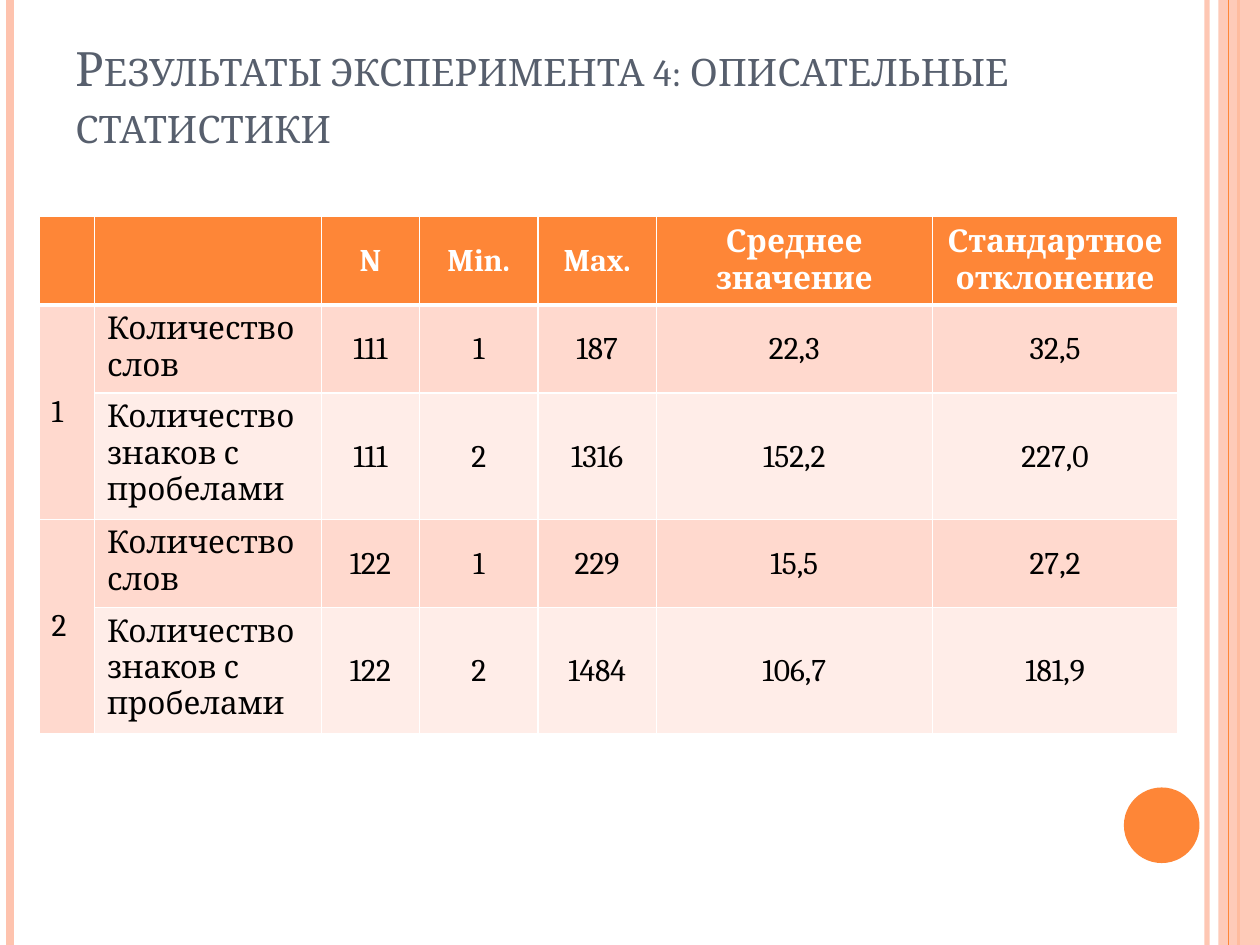
from lxml import etree
from pptx import Presentation
from pptx.dml.color import RGBColor
from pptx.enum import shapes, text
from pptx.oxml import ns
from pptx.util import Inches, Pt

ORANGE = RGBColor(0xFE, 0x86, 0x37)
PEACH = RGBColor(0xFE, 0xC3, 0xAE)
BAND_DARK = RGBColor(0xFF, 0xD9, 0xCE)
BAND_LIGHT = RGBColor(0xFF, 0xED, 0xE8)
SLATE = RGBColor(0x57, 0x5F, 0x6D)
WHITE = RGBColor(0xFF, 0xFF, 0xFF)
BLACK = RGBColor(0, 0, 0)


def write(frame, content, size=18, color=BLACK, bold=False, align=text.PP_ALIGN.LEFT):
    paragraph = frame.paragraphs[0]
    paragraph.alignment = align
    run = paragraph.add_run()
    run.text = content
    run.font.name = "Cambria"
    run.font.size = Pt(size)
    run.font.bold = bold
    run.font.color.rgb = color
    return run


def set_alpha(shape, percent):
    color = shape._element.spPr.find(".//" + ns.qn("a:srgbClr"))
    etree.SubElement(color, ns.qn("a:alpha"), val=str(percent * 1000))


presentation = Presentation()
presentation.slide_width = Inches(10)
presentation.slide_height = Inches(7.5)
slide = presentation.slides.add_slide(presentation.slide_layouts[6])

# Vertical stripes, side band and circle: x, colour, width, opacity
stripes = [
    (9.58, PEACH, 3, 93),
    (0.08, PEACH, 4.5, 100),
    (9.83, ORANGE, 1.5, 100),
    (9.75, ORANGE, 0.75, 100),
]
for x, color, width, opacity in stripes:
    if x == 9.75:  # the band lies beneath the last stripe
        band = slide.shapes.add_shape(
            shapes.MSO_SHAPE.RECTANGLE, Inches(9.67), 0, Inches(0.33), Inches(7.5))
        band.shadow.inherit = False
        band.fill.solid()
        band.fill.fore_color.rgb = PEACH
        band.line.fill.background()
        set_alpha(band, 87)
    stripe = slide.shapes.add_connector(
        shapes.MSO_CONNECTOR.STRAIGHT, Inches(x), 0, Inches(x), Inches(7.5))
    stripe.line.color.rgb = color
    stripe.line.width = Pt(width)
    if opacity < 100:
        set_alpha(stripe, opacity)
    etree.SubElement(stripe._element.spPr, ns.qn("a:effectLst"))

circle = slide.shapes.add_shape(
    shapes.MSO_SHAPE.OVAL, Inches(8.92), Inches(6.25), Inches(0.6), Inches(0.6))
circle.shadow.inherit = False
circle.fill.solid()
circle.fill.fore_color.rgb = ORANGE
circle.line.fill.background()

# Title in small capitals
title = slide.shapes.add_textbox(Inches(0.5), Inches(0.86), Inches(8.17), Inches(0.4))
title.text_frame.word_wrap = True
title.text_frame.vertical_anchor = text.MSO_ANCHOR.BOTTOM
title_run = write(title.text_frame, "Результаты эксперимента 4: описательные статистики",
                  size=27, color=SLATE)
title_run.font._element.set("cap", "small")

# Table of descriptive statistics
words, characters = "Количество слов", "Количество знаков с пробелами"
rows = [
    ["", "", "N", "Min.", "Max.", "Среднее значение", "Стандартное отклонение"],
    ["1", words, "111", "1", "187", "22,3", "32,5"],
    ["", characters, "111", "2", "1316", "152,2", "227,0"],
    ["2", words, "122", "1", "229", "15,5", "27,2"],
    ["", characters, "122", "2", "1484", "106,7", "181,9"],
]
column_widths = [0.44, 1.8, 0.78, 0.94, 0.94, 2.19, 1.95]
row_heights = [0.66, 0.68, 0.97, 0.68, 0.97]

table = slide.shapes.add_table(
    len(rows), len(column_widths), Inches(0.31), Inches(1.72),
    Inches(sum(column_widths)), Inches(sum(row_heights))).table
for column, width in zip(table.columns, column_widths):
    column.width = Inches(width)
for row, height in zip(table.rows, row_heights):
    row.height = Inches(height)

for r, values in enumerate(rows):
    header = r == 0
    for c, value in enumerate(values):
        cell = table.cell(r, c)
        properties = cell._tc.get_or_add_tcPr()
        for side in "LRTB":
            heavy = (header and side == "B") or (r == 1 and side == "T")
            border = etree.SubElement(properties, ns.qn("a:ln" + side),
                                      w=str(Pt(3 if heavy else 1)))
            fill = etree.SubElement(border, ns.qn("a:solidFill"))
            etree.SubElement(fill, ns.qn("a:srgbClr"), val=str(WHITE))
        cell.fill.solid()
        cell.fill.fore_color.rgb = (
            ORANGE if header else BAND_DARK if r % 2 or c == 0 else BAND_LIGHT)
        if header or c != 1:
            cell.vertical_anchor = text.MSO_ANCHOR.MIDDLE
        if not header and c > 1:
            cell.margin_left = cell.margin_right = cell.margin_top = Inches(0.01)
            cell.margin_bottom = 0
        if value:
            write(cell.text_frame, value, color=WHITE if header else BLACK, bold=header,
                  align=text.PP_ALIGN.CENTER if c > 1 else text.PP_ALIGN.LEFT)

# Group numbers span two rows each
for r in (1, 3):
    table.cell(r, 0).merge(table.cell(r + 1, 0))

presentation.save("out.pptx")
